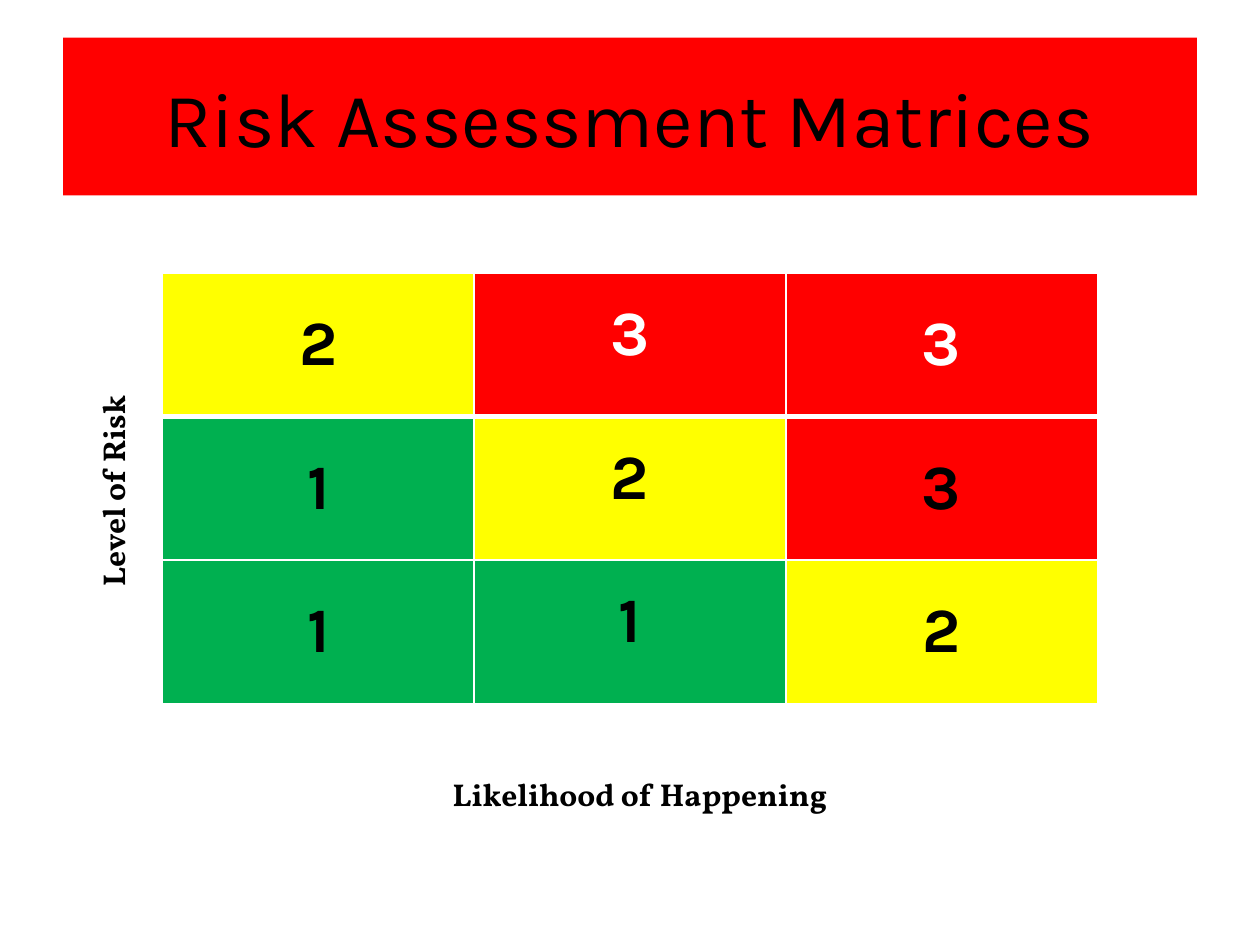
from lxml.etree import SubElement as Sub
from pptx import Presentation
from pptx.dml.color import RGBColor as RGB
from pptx.enum.text import MSO_ANCHOR as Anchor, PP_ALIGN as Align
from pptx.oxml.ns import qn
from pptx.util import Cm, Pt

RED = RGB(255, 0, 0)
GOLD = RGB(255, 255, 0)
GREEN = RGB(0, 176, 80)
BLACK = RGB(0, 0, 0)
WHITE = RGB(255, 255, 255)
FILLS = {1: GREEN, 2: GOLD, 3: RED}
RISKS = [[2, 3, 3], [1, 2, 3], [1, 1, 2]]


def write(frame, text, font="Karla", size=36, color=BLACK, bold=False,
          align=Align.CENTER):
    para = frame.paragraphs[0]
    para.alignment = align
    run = para.add_run()
    run.text = text
    run.font.name = font
    run.font.size = Pt(size)
    run.font.bold = bold
    run.font.color.rgb = color


def edge(cell, side, width):
    line = Sub(cell._tc.get_or_add_tcPr(), qn(f"a:ln{side}"), w=str(Pt(width)))
    fill = Sub(line, qn("a:solidFill"))
    Sub(fill, qn("a:srgbClr"), val=str(WHITE))


class Page:
    def __init__(self, deck):
        self.slide = deck.slides.add_slide(deck.slide_layouts[5])
        self.label_font = "Vollkorn"

    def title(self, text, left, top, width, height):
        box = self.slide.shapes.title
        box.left, box.top = Cm(left), Cm(top)
        box.width, box.height = Cm(width), Cm(height)
        box.fill.solid()
        box.fill.fore_color.rgb = RED
        box.text_frame.vertical_anchor = Anchor.MIDDLE
        write(box.text_frame, text, size=44)

    def grid(self, rows, left, top, width, height):
        count = len(rows)
        frame = self.slide.shapes.add_table(
            count, len(rows[0]), Cm(left), Cm(top), Cm(width), Cm(height))
        table = frame.table
        table.horz_banding = False
        for r, row in enumerate(rows):
            for c, risk in enumerate(row):
                self.cell(table.cell(r, c), risk, r, c)

    def cell(self, cell, risk, r, c):
        for side in "LRTB":
            thick = (r, side) in [(0, "B"), (1, "T")]
            edge(cell, side, 3 if thick else 1)
        cell.fill.solid()
        cell.fill.fore_color.rgb = FILLS[risk]
        cell.vertical_anchor = Anchor.MIDDLE
        if c == 1:
            cell.margin_bottom = Cm(0.53)
        color = WHITE if r == 0 and risk == 3 else BLACK
        write(cell.text_frame, str(risk), color=color, bold=True)

    def label(self, text, left, top, width, turn=0, align=Align.CENTER):
        box = self.slide.shapes.add_textbox(
            Cm(left), Cm(top), Cm(width), Cm(1.02))
        box.rotation = turn
        box.text_frame.word_wrap = True
        write(box.text_frame, text, self.label_font, 18, bold=True, align=align)


def main():
    deck = Presentation()
    deck.slide_width, deck.slide_height = Cm(25.4), Cm(19.05)
    page = Page(deck)
    page.title("Risk Assessment Matrices", 1.27, 0.76, 22.86, 3.18)
    page.grid(RISKS, 3.28, 5.51, 18.84, 8.67)
    page.label("Likelihood of Happening", 6.55, 15.49, 12.7)
    page.label("Level of Risk", -0.2, 9.09, 4.95, 270, Align.LEFT)
    deck.save("out.pptx")


if __name__ == "__main__":
    main()
